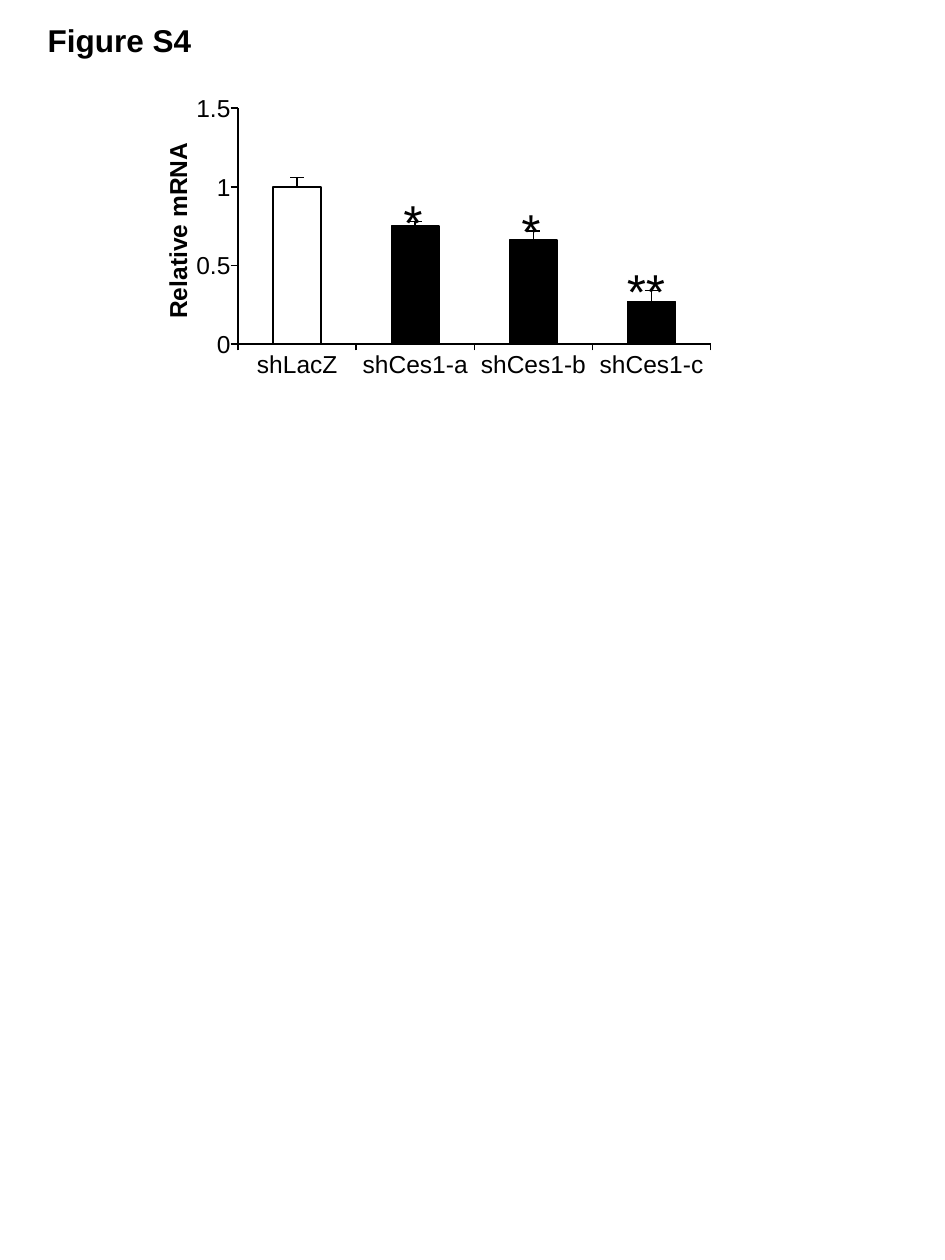
from dataclasses import dataclass

from lxml import etree
from pptx import Presentation
from pptx.dml.color import RGBColor
from pptx.enum.shapes import MSO_CONNECTOR, MSO_SHAPE
from pptx.enum.text import PP_ALIGN
from pptx.oxml.ns import qn
from pptx.util import Inches, Pt

STRAIGHT = MSO_CONNECTOR.STRAIGHT
RECTANGLE = MSO_SHAPE.RECTANGLE
LEFT, CENTER, RIGHT = PP_ALIGN.LEFT, PP_ALIGN.CENTER, PP_ALIGN.RIGHT
BLACK, WHITE = "000000", "FFFFFF"
FONT = "Arial"
AXIS_MAXIMUM = 1.5
AXIS_LABELS = ("0", "0.5", "1", "1.5")
TICK_LENGTH = 0.06
BAR_WIDTH = 0.38
CAP_WIDTH = 0.11
LABEL_HEIGHT = 0.24


@dataclass
class Box:
    """A rectangle on the page, in inches."""

    left: float
    top: float
    width: float
    height: float

    @property
    def right(self):
        """Return the right edge."""
        return self.left + self.width

    @property
    def bottom(self):
        """Return the lower edge."""
        return self.top + self.height


@dataclass
class Sample:
    """One bar with its error and significance mark."""

    name: str
    level: float
    error: float
    fill: str
    mark: str = ""


SAMPLES = (
    Sample("shLacZ", 1.0, 0.06, WHITE),
    Sample("shCes1-a", 0.75, 0.03, BLACK, "*"),
    Sample("shCes1-b", 0.66, 0.06, BLACK, "*"),
    Sample("shCes1-c", 0.27, 0.07, BLACK, "**"),
)


def color(value):
    """Turn a hex string into a colour."""
    return RGBColor.from_string(value)


def add_line(page, x1, y1, x2, y2):
    """Draw a thin black line without a shadow."""
    line = page.shapes.add_connector(
        STRAIGHT, Inches(x1), Inches(y1), Inches(x2), Inches(y2)
    )
    line.line.color.rgb = color(BLACK)
    line.line.width = Pt(1)
    properties = line._element.find(qn("p:spPr"))
    etree.SubElement(properties, qn("a:effectLst"))


def add_text(page, box, text, size=14, align=LEFT, bold=False, italic=False,
             padded=False):
    """Place one line of text, with default margins only when padded."""
    shape = page.shapes.add_textbox(
        Inches(box.left), Inches(box.top), Inches(box.width), Inches(box.height)
    )
    frame = shape.text_frame
    frame.word_wrap = padded
    if not padded:
        frame.margin_left = frame.margin_right = 0
        frame.margin_top = frame.margin_bottom = 0
    para = frame.paragraphs[0]
    para.text = text
    para.alignment = align
    para.font.name = FONT
    para.font.size = Pt(size)
    para.font.bold = bold
    para.font.italic = italic
    para.font.color.rgb = color(BLACK)
    return shape


def add_heading(page, box):
    """Place the figure number."""
    add_text(page, box, "Figure S4", size=18, bold=True, padded=True)


def add_value_axis(page, plot):
    """Draw the vertical axis with its ticks, labels and title."""
    add_line(page, plot.left, plot.top, plot.left, plot.bottom)
    step = plot.height / (len(AXIS_LABELS) - 1)
    for index, label in enumerate(AXIS_LABELS):
        y = plot.bottom - index * step
        tick_left = plot.left - TICK_LENGTH
        add_line(page, tick_left, y, plot.left, y)
        width = 0.3 if "." in label else 0.12
        label_box = Box(tick_left - width, y - LABEL_HEIGHT / 2, width, LABEL_HEIGHT)
        add_text(page, label_box, label, align=RIGHT)
    title_width = 1.41
    middle = plot.top + plot.height / 2 + 0.03
    title_box = Box(plot.left - 0.48 - title_width / 2, middle - LABEL_HEIGHT / 2,
                    title_width, LABEL_HEIGHT)
    title = add_text(page, title_box, "Relative mRNA", bold=True)
    title.rotation = 270


def add_category_axis(page, plot):
    """Draw the horizontal axis with its ticks and sample names."""
    add_line(page, plot.left, plot.bottom, plot.right, plot.bottom)
    step = plot.width / len(SAMPLES)
    for index in range(len(SAMPLES) + 1):
        x = plot.left + index * step
        add_line(page, x, plot.bottom + 0.05, x, plot.bottom)
    for index, sample in enumerate(SAMPLES):
        width = 0.3 + 0.07 * len(sample.name)
        center = plot.left + (index + 0.5) * step
        label_box = Box(center - width / 2, plot.bottom + 0.04, width, LABEL_HEIGHT)
        add_text(page, label_box, sample.name, align=CENTER)


def add_sample(page, slot, sample):
    """Draw one bar with its error bar and mark in its slot of the plot."""
    center = slot.left + slot.width / 2
    scale = slot.height / AXIS_MAXIMUM
    bar_top = slot.bottom - sample.level * scale
    cap = bar_top - sample.error * scale
    bar = page.shapes.add_shape(
        RECTANGLE, Inches(center - BAR_WIDTH / 2), Inches(bar_top),
        Inches(BAR_WIDTH), Inches(slot.bottom - bar_top)
    )
    bar.shadow.inherit = False
    bar.fill.solid()
    bar.fill.fore_color.rgb = color(sample.fill)
    bar.line.color.rgb = color(BLACK)
    bar.line.width = Pt(1)
    add_line(page, center, bar_top, center, cap)
    add_line(page, center - CAP_WIDTH / 2, cap, center + CAP_WIDTH / 2, cap)
    if sample.mark:
        indent = 0.11 + 0.1 * len(sample.mark)
        mark_box = Box(center - indent, cap - 0.29, 0.72, 0.57)
        add_text(page, mark_box, sample.mark, size=28, italic=True, padded=True)


def add_bar_figure(page, plot):
    """Draw the bar figure around the given plot area."""
    step = plot.width / len(SAMPLES)
    for index, sample in enumerate(SAMPLES):
        slot = Box(plot.left + index * step, plot.top, step, plot.height)
        add_sample(page, slot, sample)
    add_value_axis(page, plot)
    add_category_axis(page, plot)


def main():
    """Build the page and save it."""
    deck = Presentation()
    deck.slide_width, deck.slide_height = Inches(7.5), Inches(10)
    page = deck.slides.add_slide(deck.slide_layouts[6])
    add_bar_figure(page, Box(1.89, 0.86, 3.75, 1.87))
    add_heading(page, Box(0.28, 0.12, 1.79, 0.4))
    deck.save("out.pptx")


if __name__ == "__main__":
    main()
